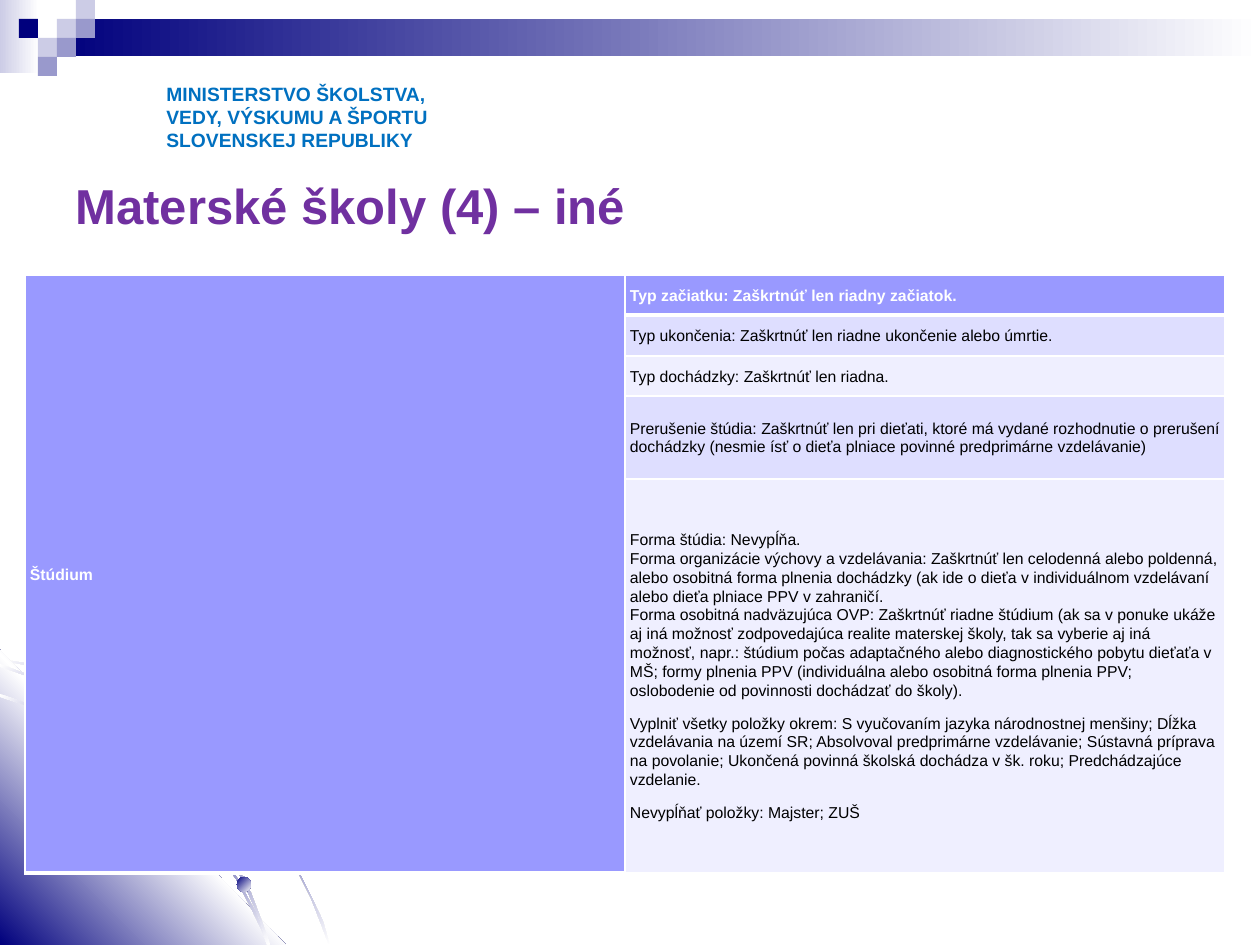
from lxml import etree
from pptx import Presentation
from pptx.dml.color import RGBColor
from pptx.enum import shapes, text
from pptx.oxml import parse_xml
from pptx.oxml.ns import nsdecls, qn
from pptx.util import Pt

EMU = 914400 / 126  # one px
COLORS = {
    "navy": "00007D", "mid": "9999CC", "light": "CCCCE6", "white": "FFFFFF",
    "blue": "0070C0", "purple": "7030A0", "black": "000000",
    "head": "9999FF", "band": "DEDEFF", "pale": "EFEFFF",
}


def paint(shape, names, angle=0):
    """Fill a shape with one colour or an even gradient, without outline or shadow."""
    shape.shadow.inherit = False
    shape.line.fill.background()
    shape.fill.solid()
    shape.fill.fore_color.rgb = RGBColor.from_string(COLORS[names[0]])
    if len(names) > 1:
        stops = "".join(
            f'<a:gs pos="{100000 * i // (len(names) - 1)}"><a:srgbClr val="{COLORS[name]}"/></a:gs>'
            for i, name in enumerate(names))
        gradient = parse_xml(
            f'<a:gradFill {nsdecls("a")} rotWithShape="1"><a:gsLst>{stops}</a:gsLst>'
            f'<a:lin ang="{angle * 60000}" scaled="0"/></a:gradFill>')
        solid = shape._element.spPr.find(qn("a:solidFill"))
        solid.getparent().replace(solid, gradient)


def write(frame, lines, size, color, bold, **paragraph_format):
    """Write one paragraph per line, all in the same style."""
    for i, line in enumerate(lines):
        para = frame.paragraphs[0] if i == 0 else frame.add_paragraph()
        for name, value in paragraph_format.items():
            setattr(para, name, value)
        span = para.add_run()
        span.text = line
        for name, value in {"size": Pt(size), "bold": bold, "name": "Arial"}.items():
            setattr(span.font, name, value)
        span.font.color.rgb = RGBColor.from_string(COLORS[color])


deck = Presentation()
deck.slide_width, deck.slide_height = round(1260 * EMU), round(945 * EMU)
page = deck.slides.add_slide(deck.slide_layouts[5])

# Top bar, its squares on a 19 px grid, and the ball at the bottom
SQUARE = 19
squares = [(3, 1, "light"), (4, 0, "light"), (4, 1, "mid"), (2, 2, "light"),
           (1, 1, "navy"), (3, 2, "mid"), (2, 3, "mid")]
rect, oval = shapes.MSO_SHAPE.RECTANGLE, shapes.MSO_SHAPE.OVAL
ornaments = [
    (rect, (0, 0, 39, 73), ["light", "white"], 0),
    (rect, (57, 19, 1203, 37), ["navy", "white"], 0),
    *[(rect, (col * SQUARE, row * SQUARE, SQUARE, SQUARE), [name], 0) for col, row, name in squares],
]
ball = (oval, (237, 877, 14, 15), ["navy", "white"], 45)

# Corner triangle and the curved ribbons
ribbon = ["white", "navy", "white"]
outlines = [
    ([(50, 669), (25, 663), (0, 659), (0, 660), (25, 665), (50, 670), (86, 683), (120, 697),
      (154, 717), (185, 738), (214, 762), (241, 790), (265, 820), (287, 853), (300, 876),
      (311, 898), (320, 921), (329, 945), (330, 945), (323, 921), (312, 898), (301, 876),
      (289, 853), (267, 819), (242, 789), (214, 761), (186, 736), (155, 714), (121, 697),
      (87, 680)], ribbon, 45),
    ([(286, 945), (0, 945), (0, 650)], ["navy", "white", "navy"], 315),
    ([(253, 912), (261, 929), (267, 945), (270, 945), (263, 927), (255, 911), (237, 878),
      (215, 845), (190, 814), (164, 786), (135, 762), (103, 741), (71, 722), (37, 707),
      (0, 694), (0, 697), (34, 708), (69, 723), (102, 743), (134, 764), (163, 789),
      (189, 816), (214, 847), (236, 879)], ribbon, 45),
    ([(0, 664), (0, 667), (33, 678), (66, 694), (97, 712), (126, 735), (154, 759), (180, 785),
      (202, 814), (224, 845), (237, 869), (249, 895), (260, 920), (267, 944), (270, 944),
      (261, 919), (251, 893), (238, 868), (226, 844), (204, 812), (181, 783), (155, 756),
      (127, 732), (100, 711), (68, 693), (34, 677)], ribbon, 45),
]
for points, names, angle in outlines:
    builder = page.shapes.build_freeform(*points[0], scale=EMU)
    builder.add_line_segments(points[1:], close=True)
    paint(builder.convert_to_shape(), names, angle)
for kind, place, names, angle in ornaments + [ball]:
    paint(page.shapes.add_shape(kind, *[round(n * EMU) for n in place]), names, angle)

# Ministry name
box = page.shapes.add_textbox(*[round(n * EMU) for n in (154, 76, 307, 83)])
box.text_frame.word_wrap = True
write(box.text_frame, ["MINISTERSTVO ŠKOLSTVA,", "VEDY, VÝSKUMU A ŠPORTU", "SLOVENSKEJ REPUBLIKY"],
      11, "blue", True)

# Title
title = page.shapes.title
for name, value in {"left": 63, "top": 165, "width": 1134, "height": 79}.items():
    setattr(title, name, round(value * EMU))
title.text_frame.vertical_anchor = text.MSO_ANCHOR.MIDDLE
write(title.text_frame, ["Materské školy (4) – iné"], 28, "purple", True,
      alignment=text.PP_ALIGN.LEFT)

# Table: one merged label on the left, the rules on the right
rows = [
    (40, "head", ["Typ začiatku: Zaškrtnúť len riadny začiatok."]),
    (41, "band", ["Typ ukončenia: Zaškrtnúť len riadne ukončenie alebo úmrtie."]),
    (40, "pale", ["Typ dochádzky: Zaškrtnúť len riadna."]),
    (83, "band", ["Prerušenie štúdia: Zaškrtnúť len pri dieťati, ktoré má vydané rozhodnutie o prerušení "
                  "dochádzky (nesmie ísť o dieťa plniace povinné predprimárne vzdelávanie)"]),
    (394, "pale", [
        "Forma štúdia: Nevypĺňa.",
        "Forma organizácie výchovy a vzdelávania: Zaškrtnúť len celodenná alebo poldenná, alebo "
        "osobitná forma plnenia dochádzky (ak ide o dieťa v individuálnom vzdelávaní alebo dieťa "
        "plniace PPV v zahraničí.",
        "Forma osobitná nadväzujúca OVP: Zaškrtnúť riadne štúdium (ak sa v ponuke ukáže aj iná "
        "možnosť zodpovedajúca realite materskej školy, tak sa vyberie aj iná možnosť, napr.: "
        "štúdium počas adaptačného alebo diagnostického pobytu dieťaťa v MŠ; formy plnenia PPV "
        "(individuálna alebo osobitná forma plnenia PPV; oslobodenie od povinnosti dochádzať do školy).",
        "Vyplniť všetky položky okrem: S vyučovaním jazyka národnostnej menšiny; Dĺžka vzdelávania "
        "na území SR; Absolvoval predprimárne vzdelávanie; Sústavná príprava na povolanie; Ukončená "
        "povinná školská dochádza v šk. roku; Predchádzajúce vzdelanie.",
        "Nevypĺňať položky: Majster; ZUŠ"]),
]
place = [round(n * EMU) for n in (25, 275, 1200, sum(row[0] for row in rows))]
table = page.shapes.add_table(len(rows), 2, *place).table
table.first_row = table.horz_banding = False
for column in table.columns:
    column.width = round(600 * EMU)
for i, (height, fill, lines) in enumerate(rows):
    table.rows[i].height = round(height * EMU)
    is_head = i == 0
    write(table.cell(i, 1).text_frame, lines, 9, "white" if is_head else "black", is_head,
          line_spacing=1.07)
    for col, name in enumerate(("head", fill)):
        cell = table.cell(i, col)
        cell.fill.solid()
        cell.fill.fore_color.rgb = RGBColor.from_string(COLORS[name])
        cell.vertical_anchor = text.MSO_ANCHOR.MIDDLE
        for side, margin in {"left": 5, "right": 5, "top": 0, "bottom": 0}.items():
            setattr(cell, f"margin_{side}", round(margin * EMU))
        # White borders, thicker below the heading cells
        for at, side in enumerate("LRTB"):
            thick = side == "B" and (is_head or col == 0)
            border = etree.Element(qn(f"a:ln{side}"), w=str(Pt(3 if thick else 1)))
            color = etree.SubElement(etree.SubElement(border, qn("a:solidFill")), qn("a:srgbClr"))
            color.set("val", COLORS["white"])
            cell._tc.get_or_add_tcPr().insert(at, border)
for para in table.cell(4, 1).text_frame.paragraphs[2:4]:
    para.space_after = Pt(8)
table.cell(0, 0).merge(table.cell(4, 0))
write(table.cell(0, 0).text_frame, ["Štúdium"], 9, "white", True, line_spacing=1.07)

deck.save("out.pptx")
